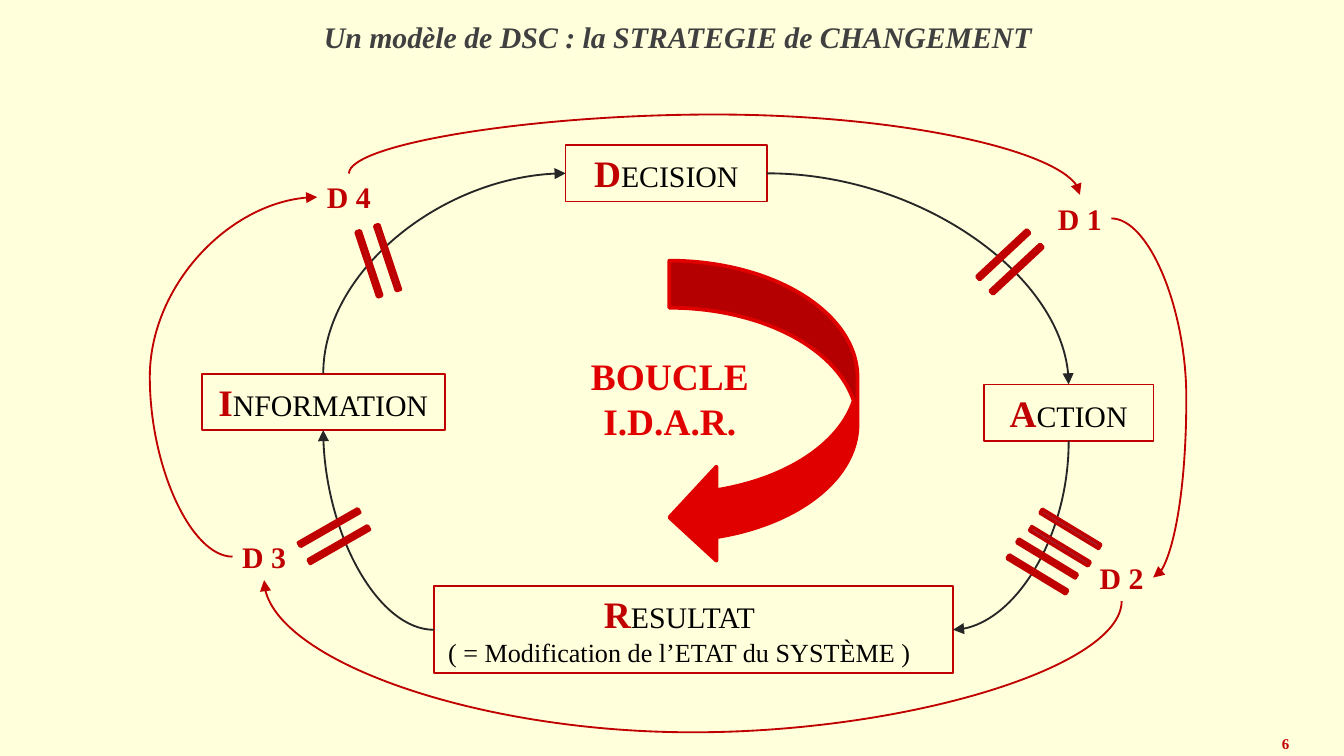
import lxml.etree
import pptx
import pptx.dml.color
import pptx.enum.shapes
import pptx.enum.text
import pptx.oxml.ns
import pptx.util

Pt = pptx.util.Pt
qn = pptx.oxml.ns.qn
SHAPES = pptx.enum.shapes.MSO_SHAPE
ANCHOR = pptx.enum.text.MSO_ANCHOR

FONT = "Times New Roman"
COLORS = {"page": "FFFFDC", "red": "C00000", "bright": "E10000", "blue": "4F81BD",
          "dark": "262626", "grey": "404040", "black": "000000"}

# Left, top, width, height
FRAMES = {
    "R": (232.5, 314, 278, 46.8),
    "D": (303, 77.8, 108, 30.2),
    "A": (527, 206, 91, 30.2),
    "I": (108, 200.2, 130.3, 30.2),
    "D 1": (561.6, 104.4, 33.8, 25.2),
    "D 2": (584, 296.8, 33.8, 25.2),
    "D 3": (124.6, 285.6, 33.8, 25.2),
    "D 4": (170, 93, 33.8, 25.2),
}
STAGES = {"R": "ESULTAT", "D": "ECISION", "A": "CTION", "I": "NFORMATION"}
RESULT_NOTE = "( = Modification de l’ETAT du SYSTÈME )"
DELAYS = ["D 1", "D 2", "D 3", "D 4"]

# Start and end (frame, side), rotation, flips, bend of the curve
TOP, LEFT, BOTTOM, RIGHT = range(4)
LOOP_ARCS = [
    (("D", RIGHT), ("A", TOP), 0, "", None),
    (("A", BOTTOM), ("R", RIGHT), 90, "", None),
    (("R", LEFT), ("I", BOTTOM), 180, "", None),
    (("I", TOP), ("D", LEFT), 90, "HV", None),
]
DELAY_ARCS = [
    (("D 1", RIGHT), ("D 2", RIGHT), 0, "", 1.794),
    (("D 2", BOTTOM), ("D 3", BOTTOM), 90, "H", -6.283),
    (("D 3", LEFT), ("D 4", LEFT), 180, "H", -0.976),
    (("D 4", TOP), ("D 1", TOP), 270, "H", -2.778),
]
# Left, top, width, height, rotation
DELAY_MARKS = [
    (516.2, 120.2, 49.7, 40.3, 317),
    (545.8, 267.1, 49.7, 41.8, 31.2),
    (533.5, 284.4, 49.7, 38.2, 31.2),
    (154.1, 267.1, 49.7, 40.3, 330.2),
    (177.8, 119.5, 49.7, 40.3, 251.5),
]


def color(name):
    return pptx.dml.color.RGBColor.from_string(COLORS[name])


def points(values):
    return [Pt(value) for value in values]


def write(box, lines, anchor=ANCHOR.TOP, inset=None, wrap=True):
    """Fill a box with centred lines of (text, size, colour, bold) spans."""
    frame = box.text_frame
    frame.word_wrap = wrap
    frame.vertical_anchor = anchor
    if inset is not None:
        frame.margin_left = frame.margin_right = Pt(inset)
        frame.margin_top = frame.margin_bottom = Pt(inset)
    for index, line in enumerate(lines):
        para = frame.add_paragraph() if index else frame.paragraphs[0]
        para.alignment = pptx.enum.text.PP_ALIGN.CENTER
        for text, size, tint, bold in line:
            span = para.add_run()
            span.text = text
            span.font.name = FONT
            span.font.size = Pt(size)
            span.font.bold = bold
            span.font.color.rgb = color(tint)
    return frame


def add_text(page, frame, lines, **options):
    return write(page.shapes.add_textbox(*points(frame)), lines, **options)


def add_shape(page, kind, frame, fill, line, width):
    shape = page.shapes.add_shape(kind, *points(frame))
    shape.shadow.inherit = False
    if fill:
        shape.fill.solid()
        shape.fill.fore_color.rgb = color(fill)
    else:
        shape.fill.background()
    shape.line.color.rgb = color(line)
    shape.line.width = Pt(width)
    return shape


def side_middle(name, side):
    left, top, width, height = FRAMES[name]
    across, down = {TOP: (0.5, 0), LEFT: (0, 0.5), BOTTOM: (0.5, 1), RIGHT: (1, 0.5)}[side]
    return left + across * width, top + down * height


def add_arc(page, start, end, rotation, flips, bend, tint):
    """Draw a curved arrow; its frame is turned about the middle of its ends."""
    (x1, y1), (x2, y2) = side_middle(*start), side_middle(*end)
    width, height = abs(x2 - x1), abs(y2 - y1)
    if rotation % 180:
        width, height = height, width
    left, top = (x1 + x2 - width) / 2, (y1 + y2 - height) / 2
    arc = page.shapes.add_connector(
        pptx.enum.shapes.MSO_CONNECTOR.CURVE,
        *points((left, top, left + width, top + height)))
    arc.line.color.rgb = color(tint)
    arc.line.width = Pt(1)
    properties = arc._element.spPr
    placement = properties.find(qn("a:xfrm"))
    placement.set("rot", str(rotation * 60000))
    for flip in flips:
        placement.set("flip" + flip, "1")
    geometry = properties.find(qn("a:prstGeom"))
    if bend is None:
        geometry.set("prst", "curvedConnector2")
    else:
        guide = lxml.etree.SubElement(geometry.find(qn("a:avLst")), qn("a:gd"))
        guide.set("name", "adj1")
        guide.set("fmla", f"val {round(bend * 100000)}")
    head = lxml.etree.SubElement(properties.find(qn("a:ln")), qn("a:tailEnd"))
    head.set("type", "triangle")
    head.set("w", "med")
    head.set("len", "med")
    lxml.etree.SubElement(properties, qn("a:effectLst"))


def main():
    deck = pptx.Presentation()
    deck.slide_width, deck.slide_height = Pt(720), Pt(405)
    page = deck.slides.add_slide(deck.slide_layouts[6])
    page.background.fill.solid()
    page.background.fill.fore_color.rgb = color("page")

    add_text(page, (671.8, 391.7, 33.8, 13), [[("6", 8, "red", True)]], anchor=ANCHOR.MIDDLE)

    for initial, rest in STAGES.items():
        box = add_shape(page, SHAPES.RECTANGLE, FRAMES[initial], None, "red", 1)
        lines = [[(initial, 20, "red", True), (rest, 16, "black", False)]]
        if initial == "R":
            lines.append([(RESULT_NOTE, 14, "black", False)])
        frame = write(box, lines, inset=2.88)
        if initial == "R":
            frame.paragraphs[0]._p.get_or_add_pPr().set("marR", str(Pt(15)))

    for arc in LOOP_ARCS:
        add_arc(page, *arc, "dark")

    add_text(page, (308.9, 185.8, 100, 55.4),
             [[(text, 20, "bright", True)] for text in ("BOUCLE", "I.D.A.R.")], wrap=False)
    add_shape(page, SHAPES.CURVED_LEFT_ARROW, (358.6, 139.7, 100.8, 162.7),
              "bright", "bright", 2)

    for *frame, rotation in DELAY_MARKS:
        mark = add_shape(page, SHAPES.MATH_EQUAL, frame, "blue", "red", 2)
        mark.rotation = rotation
        mark.adjustments[0], mark.adjustments[1] = 0.055, 0.206

    for label in DELAYS:
        add_text(page, FRAMES[label], [[(label, 16, "red", True)]], inset=2.88)
    for arc in DELAY_ARCS:
        add_arc(page, *arc, "red")

    title = add_text(page, (14.4, 10.1, 697.7, 19.4),
                     [[("Un modèle de DSC : la STRATEGIE de CHANGEMENT", 16, "grey", True)]],
                     anchor=ANCHOR.MIDDLE)
    title.paragraphs[0].runs[0].font.italic = True

    deck.save("out.pptx")


if __name__ == "__main__":
    main()
